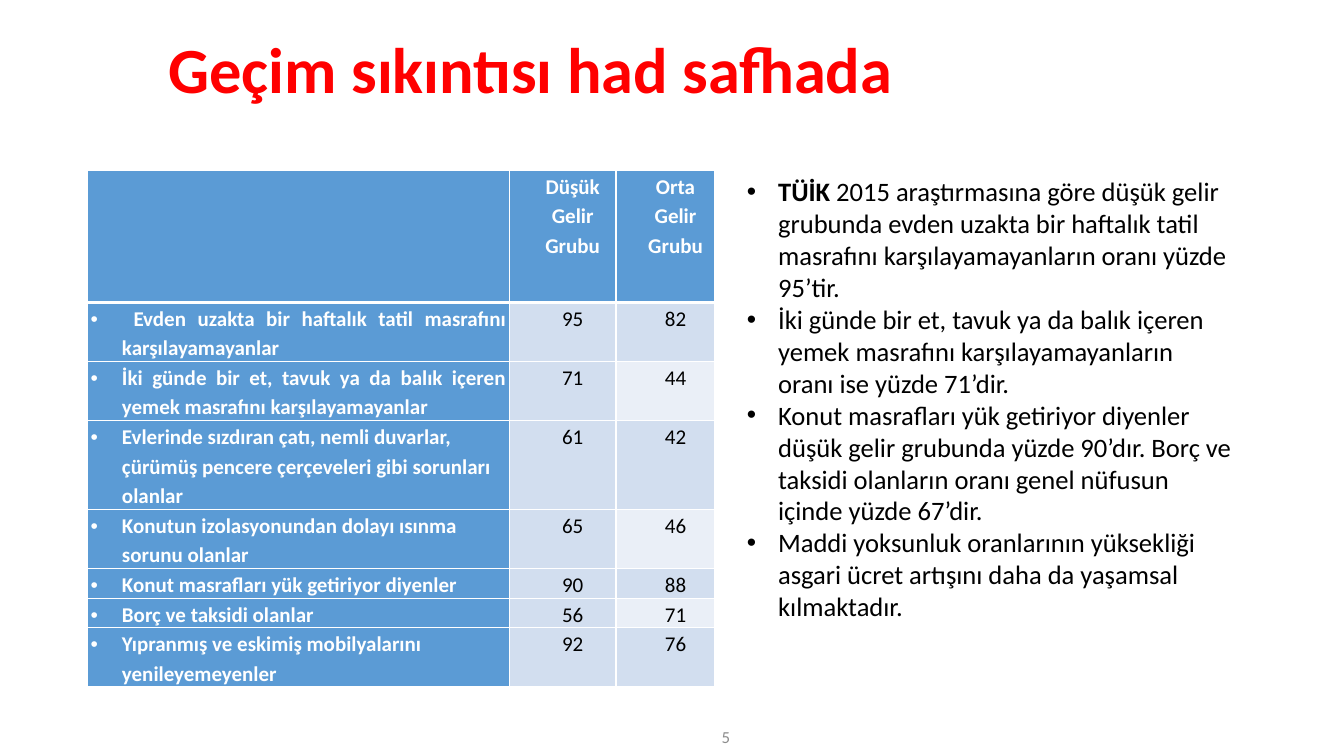
from dataclasses import dataclass

from lxml.etree import SubElement
from pptx import Presentation
from pptx.dml.color import RGBColor
from pptx.enum.text import MSO_ANCHOR, PP_ALIGN as Align
from pptx.oxml.ns import qn
from pptx.util import Inches, Pt


@dataclass(frozen=True)
class Theme:
    font: str = "Calibri"
    title_size: int = 46
    body_size: int = 19
    table_size: int = 15
    number_size: int = 12
    red: str = "FF0000"
    black: str = "000000"
    white: str = "FFFFFF"
    grey: str = "8C8C8C"
    blue: str = "5B9BD5"
    band_dark: str = "D2DEEF"
    band_light: str = "EAEFF7"


THEME = Theme()

HEADINGS = ["", "Düşük Gelir Grubu", "Orta Gelir Grubu"]
# Label, low income share, middle income share, lines of text in the label
HARDSHIPS = [
    (" Evden uzakta bir haftalık tatil masrafını karşılayamayanlar", 95, 82, 2),
    ("İki günde bir et, tavuk ya da balık içeren yemek masrafını karşılayamayanlar", 71, 44, 2),
    ("Evlerinde sızdıran çatı, nemli duvarlar, çürümüş pencere çerçeveleri gibi sorunları olanlar",
     61, 42, 3),
    ("Konutun izolasyonundan dolayı ısınma sorunu olanlar", 65, 46, 2),
    ("Konut masrafları yük getiriyor diyenler", 90, 88, 1),
    ("Borç ve taksidi olanlar", 56, 71, 1),
    ("Yıpranmış ve eskimiş mobilyalarını yenileyemeyenler", 92, 76, 2),
]
JUSTIFIED_ROWS = 2
COLUMN_WIDTHS = [4.18, 1.06, 0.98]
HEADER_HEIGHT, LINE_HEIGHT = 1.31, 0.29

FINDINGS = [
    [("TÜİK ", True),
     ("2015 araştırmasına göre düşük gelir grubunda evden uzakta bir haftalık tatil "
      "masrafını karşılayamayanların oranı yüzde 95’tir.", False)],
    [("İki günde bir et, tavuk ya da balık içeren yemek masrafını karşılayamayanların "
      "oranı ise yüzde 71’dir.", False)],
    [("Konut masrafları yük getiriyor diyenler düşük gelir grubunda yüzde 90’dır. Borç ve "
      "taksidi olanların oranı genel nüfusun içinde yüzde 67’dir.", False)],
    [("Maddi yoksunluk oranlarının yüksekliği asgari ücret artışını daha da yaşamsal "
      "kılmaktadır.", False)],
]


def add_span(para, text, *, size, color, bold=False):
    span = para.add_run()
    span.text = text
    span.font.name = THEME.font
    span.font.size = Pt(size)
    span.font.bold = bold
    span.font.color.rgb = RGBColor.from_string(color)


def format_para(para, *, align=Align.LEFT, left=0, bullet=False, spacing=1.0):
    properties = para._p.get_or_add_pPr()
    if bullet:
        left = 0.31
        properties.set("indent", str(Inches(-left)))
        SubElement(properties, qn("a:buFont"), typeface="Arial")
        SubElement(properties, qn("a:buChar"), char="•")
    properties.set("marL", str(Inches(left)))
    para.alignment = align
    para.line_spacing = spacing


def add_box(page, left, top, width, height, anchor=MSO_ANCHOR.TOP):
    box = page.shapes.add_textbox(Inches(left), Inches(top), Inches(width), Inches(height))
    box.text_frame.word_wrap = True
    box.text_frame.vertical_anchor = anchor
    return box.text_frame


def set_borders(cell, *, top=1, bottom=1):
    properties = cell._tc.get_or_add_tcPr()
    sides = [("L", 1), ("R", 1), ("T", top), ("B", bottom)]
    for position, (side, points) in enumerate(sides):
        line = SubElement(properties, qn(f"a:ln{side}"), w=str(Pt(points)))
        fill = SubElement(line, qn("a:solidFill"))
        SubElement(fill, qn("a:srgbClr"), val=THEME.white)
        properties.insert(position, line)


def fill_cell(cell, text, *, fill, color, bold=False, **layout):
    cell.margin_left = cell.margin_right = Inches(0.03)
    cell.margin_top = cell.margin_bottom = 0
    cell.fill.solid()
    cell.fill.fore_color.rgb = RGBColor.from_string(fill)
    para = cell.text_frame.paragraphs[0]
    format_para(para, spacing=1.15, **layout)
    if text:
        add_span(para, text, size=THEME.table_size, color=color, bold=bold)


def add_title(page, text):
    title = page.shapes.title
    title.left, title.top = Inches(1.57), Inches(0.27)
    title.width, title.height = Inches(10.77), Inches(0.91)
    title.text_frame.vertical_anchor = MSO_ANCHOR.MIDDLE
    para = title.text_frame.paragraphs[0]
    format_para(para, spacing=0.9)
    add_span(para, text, size=THEME.title_size, color=THEME.red, bold=True)


def add_hardship_table(page):
    heights = [HEADER_HEIGHT] + [LINE_HEIGHT * lines for *_, lines in HARDSHIPS]
    frame = page.shapes.add_table(
        len(heights), len(COLUMN_WIDTHS), Inches(0.87), Inches(1.69),
        Inches(sum(COLUMN_WIDTHS)), Inches(sum(heights)))
    table = frame.table
    table.first_row = table.horz_banding = False
    for column, width in zip(table.columns, COLUMN_WIDTHS):
        column.width = Inches(width)
    for row, height in zip(table.rows, heights):
        row.height = Inches(height)

    # Header row, set off by a thicker rule
    for index, heading in enumerate(HEADINGS):
        cell = table.cell(0, index)
        fill_cell(cell, heading, fill=THEME.blue, color=THEME.white, bold=True,
                  align=Align.CENTER, left=0.2)
        set_borders(cell, bottom=3)

    # Bulleted labels and shares; the last column is banded
    for number, (label, low, middle, _) in enumerate(HARDSHIPS, start=1):
        cells = table.rows[number].cells
        align = Align.JUSTIFY if number <= JUSTIFIED_ROWS else Align.LEFT
        fill_cell(cells[0], label, fill=THEME.blue, color=THEME.white, bold=True,
                  align=align, bullet=True)
        band = THEME.band_dark if number % 2 else THEME.band_light
        for index, share, fill in [(1, low, THEME.band_dark), (2, middle, band)]:
            fill_cell(cells[index], str(share), fill=fill, color=THEME.black,
                      align=Align.CENTER, left=0.2)
        for cell in cells:
            set_borders(cell, top=3 if number == 1 else 1)


def add_findings(page):
    frame = add_box(page, 7.31, 1.69, 5.03, 5.18)
    for index, finding in enumerate(FINDINGS):
        para = frame.add_paragraph() if index else frame.paragraphs[0]
        format_para(para, bullet=True)
        for text, bold in finding:
            add_span(para, text, size=THEME.body_size, color=THEME.black, bold=bold)


def add_page_number(page, number):
    para = add_box(page, 4.34, 7.11, 3, 0.4, MSO_ANCHOR.MIDDLE).paragraphs[0]
    format_para(para, align=Align.RIGHT)
    add_span(para, number, size=THEME.number_size, color=THEME.grey)


def main():
    deck = Presentation()
    deck.slide_width, deck.slide_height = Inches(13.33), Inches(7.5)
    page = deck.slides.add_slide(deck.slide_layouts[5])
    add_title(page, "Geçim sıkıntısı had safhada")
    add_hardship_table(page)
    add_findings(page)
    add_page_number(page, "5")
    deck.save("out.pptx")


if __name__ == "__main__":
    main()
